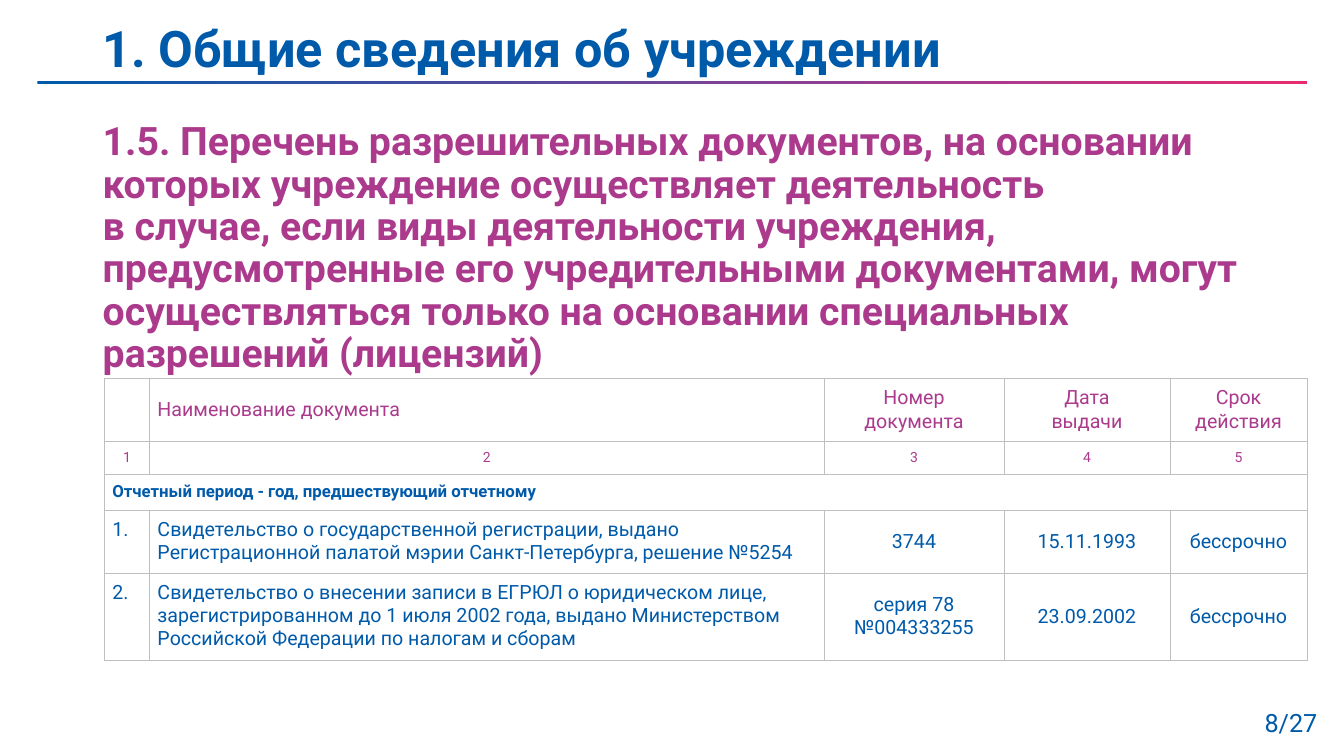
from copy import deepcopy

from lxml import etree
from pptx import Presentation
from pptx.dml.color import RGBColor
from pptx.enum.shapes import MSO_SHAPE
from pptx.enum.text import MSO_ANCHOR, PP_ALIGN
from pptx.oxml.ns import qn
from pptx.util import Cm, Pt

BLUE = RGBColor(0x00, 0x5A, 0xAA)
PLUM = RGBColor(0xAB, 0x3A, 0x8D)
PINK = RGBColor(0xE7, 0x2B, 0x70)
GREY = RGBColor(0xBF, 0xBF, 0xBF)

RECT = MSO_SHAPE.RECTANGLE
TOP, MIDDLE = MSO_ANCHOR.TOP, MSO_ANCHOR.MIDDLE
LEFT, CENTER, RIGHT = PP_ALIGN.LEFT, PP_ALIGN.CENTER, PP_ALIGN.RIGHT

FACE = "Roboto"
TITLE = "1. Общие сведения об учреждении"
LEAD = (
    "1.5. Перечень разрешительных документов, на основании которых "
    "учреждение осуществляет деятельность \v"
    "в случае, если виды деятельности учреждения, предусмотренные его "
    "учредительными документами, могут осуществляться только на основании "
    "специальных разрешений (лицензий)"
)
PERIOD = "Отчетный период - год, предшествующий отчетному"
ROWS = [
    ["", "Наименование документа", "Номер\vдокумента", "Дата\vвыдачи",
     "Срок\vдействия"],
    ["1", "2", "3", "4", "5"],
    [PERIOD, "", "", "", ""],
    ["1.", "Свидетельство о государственной регистрации, выдано "
     "Регистрационной палатой мэрии Санкт-Петербурга, решение №5254",
     "3744", "15.11.1993", "бессрочно"],
    ["2.", "Свидетельство о внесении записи в ЕГРЮЛ о юридическом лице, "
     "зарегистрированном до 1 июля 2002 года, выдано Министерством "
     "Российской Федерации по налогам и сборам",
     "серия 78\n№004333255", "23.09.2002", "бессрочно"],
]
WIDTHS = [1.14, 17, 4.53, 4.19, 3.45]
HEIGHTS = [1.58, 0.82, 0.91, 1.58, 2.2]
STYLES = [(14, PLUM, False), (10, PLUM, False), (12, BLUE, True),
          (14, BLUE, False), (14, BLUE, False)]


def style(frame, size, color, bold=False, align=LEFT):
    for para in frame.paragraphs:
        para.alignment = align
        for run in para.runs:
            font = run.font
            font.name, font.size, font.bold = FACE, Pt(size), bold
            font.color.rgb = color


def add_text(slide, box, text, size, color, bold=False, align=LEFT, anchor=TOP):
    frame = slide.shapes.add_textbox(*map(Cm, box)).text_frame
    frame.word_wrap = True
    frame.vertical_anchor = anchor
    frame.text = text
    style(frame, size, color, bold, align)
    return frame.paragraphs[0]


def add_header(slide, left, top, width):
    bar = slide.shapes.add_shape(RECT, Cm(left), Cm(top + 1.78), Cm(width), Cm(0.1))
    bar.shadow.inherit = False
    bar.line.fill.background()
    bar.fill.gradient()
    bar.fill.gradient_angle = 0
    stops = bar.fill.gradient_stops
    marks = bar.element.spPr.find(".//" + qn("a:gsLst"))
    marks.append(deepcopy(marks[-1]))
    stops = bar.fill.gradient_stops
    for stop, color, place in zip(stops, (BLUE, PLUM, PINK), (0, 0.75, 1)):
        stop.color.rgb = color
        stop.position = place
    title = add_text(slide, (left + 1.4, top, 29.2, 2.08), TITLE, 36, BLUE,
                     bold=True, anchor=MIDDLE)
    title.line_spacing = 0.9


def add_lead(slide, left, top, width, height):
    para = add_text(slide, (left, top, width, height), LEAD, 28, PLUM, bold=True)
    para.line_spacing = 0.9
    para.space_after = Pt(18)


def add_edges(cell):
    props = cell._tc.get_or_add_tcPr()
    for spot, side in enumerate(("lnL", "lnR", "lnT", "lnB")):
        line = etree.Element(qn("a:" + side), w=str(Pt(0.5)))
        fill = etree.SubElement(line, qn("a:solidFill"))
        etree.SubElement(fill, qn("a:srgbClr"), val=str(GREY))
        props.insert(spot, line)


def add_grid(slide, left, top):
    frame = slide.shapes.add_table(
        len(ROWS), len(WIDTHS), Cm(left), Cm(top),
        Cm(sum(WIDTHS)), Cm(sum(HEIGHTS)))
    table = frame.table
    table.first_row = table.horz_banding = False
    for col, width in zip(table.columns, WIDTHS):
        col.width = Cm(width)
    for i, (row, height) in enumerate(zip(table.rows, HEIGHTS)):
        row.height = Cm(height)
        for j, cell in enumerate(row.cells):
            cell.fill.background()
            add_edges(cell)
            cell.margin_left = cell.margin_right = Cm(0.2)
            cell.margin_top = cell.margin_bottom = Cm(0.2)
            mid = j > 1 or (i == 0 and j == 1) or i == 1
            cell.vertical_anchor = MIDDLE if mid else TOP
            cell.text_frame.text = ROWS[i][j]
            align = CENTER if j > 1 or i == 1 else LEFT
            style(cell.text_frame, *STYLES[i], align)
    table.cell(2, 0).merge(table.cell(2, len(WIDTHS) - 1))


def main():
    deck = Presentation()
    deck.slide_width, deck.slide_height = Cm(33.87), Cm(19.05)
    slide = deck.slides.add_slide(deck.slide_layouts[6])
    add_header(slide, 0.94, 0.25, 32)
    add_lead(slide, 2.34, 2.95, 30.6, 14.1)
    add_grid(slide, 2.63, 9.53)
    add_text(slide, (30.91, 17.7, 2.54, 1.03), "8/27", 18, BLUE, align=RIGHT)
    deck.save("out.pptx")


if __name__ == "__main__":
    main()
